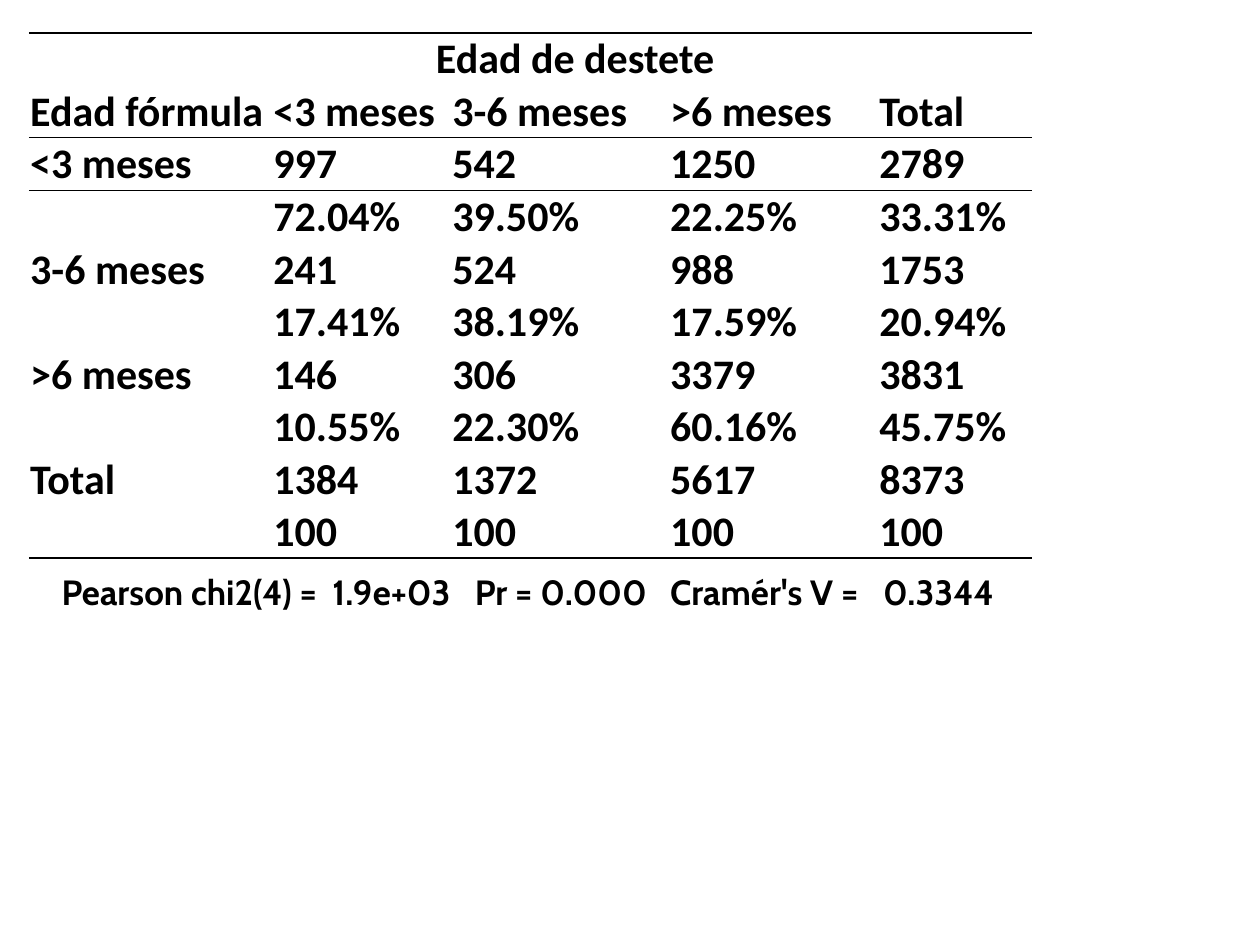
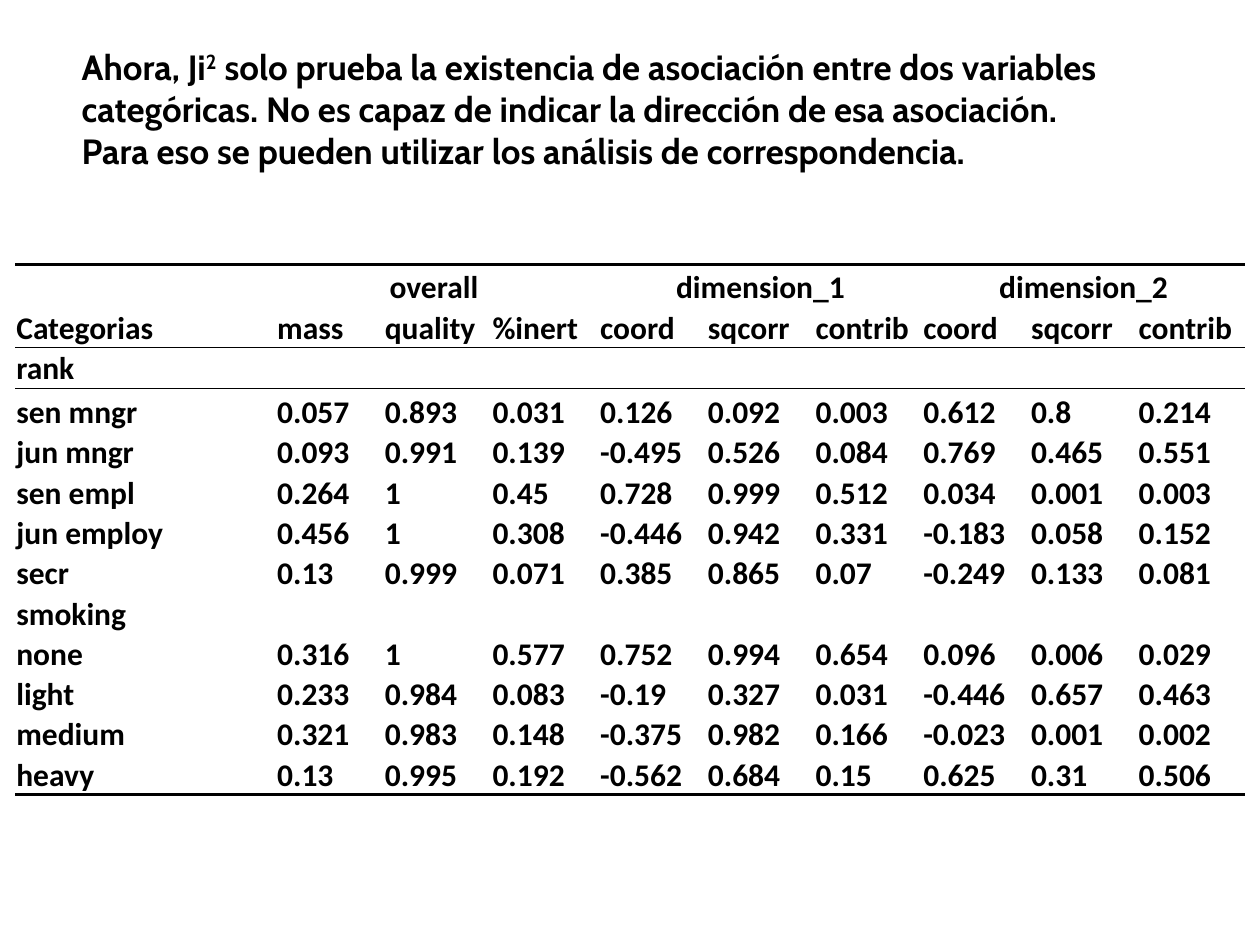
from lxml import etree
from pptx import Presentation
from pptx.dml.color import RGBColor
from pptx.enum.text import MSO_ANCHOR, PP_ALIGN
from pptx.oxml import parse_xml
from pptx.oxml.ns import nsdecls, qn
from pptx.util import Inches, Pt

BLACK = RGBColor(0x00, 0x00, 0x00)
NOTE_FONT = {"name": "Cabin", "size": Pt(20), "bold": True}
THICK, THIN = Pt(1.5), Pt(0.5)
NO_STYLE = "{2D5ABB26-0587-4C30-8999-92F81FD0307C}"
MARGINS = {"margin_left": 0.01, "margin_right": 0.01, "margin_top": 0.01, "margin_bottom": 0}


def add_run(p, text, fmt):
    r = p.add_run()
    r.text = text
    for name, value in fmt.items():
        setattr(r.font, name, value)
    r.font.color.rgb = BLACK
    return r


def add_ruled_table(s, left, top, widths, heights, rows, spans, size):
    """Table with a two-row header, ruled above, below the header and at the end."""
    sp = s.shapes.add_table(len(rows), len(widths), Inches(left), Inches(top),
                            Inches(sum(widths)), Inches(sum(heights)))
    tbl = sp.table
    tbl.first_row = tbl.horz_banding = False
    sp._element.find(".//" + qn("a:tableStyleId")).text = NO_STYLE
    for col, width in zip(tbl.columns, widths):
        col.width = Inches(width)
    for row, height in zip(tbl.rows, heights):
        row.height = Inches(height)
    rules = {0: ("lnT", THICK), 1: ("lnB", THIN), 2: ("lnT", THIN),
             len(rows) - 1: ("lnB", THICK)}
    for i, values in enumerate(rows):
        for j in range(len(widths)):
            cell = tbl.cell(i, j)
            for name, value in MARGINS.items():
                setattr(cell, name, Inches(value))
            cell.vertical_anchor = MSO_ANCHOR.BOTTOM
            if i in rules:
                side, width = rules[i]
                cell._tc.get_or_add_tcPr().append(parse_xml(
                    f'<a:{side} {nsdecls("a")} w="{width}"><a:solidFill>'
                    f'<a:srgbClr val="{BLACK}"/></a:solidFill></a:{side}>'))
            cell.fill.background()
            if j < len(values) and values[j]:
                p = cell.text_frame.paragraphs[0]
                add_run(p, values[j], {"name": "Calibri", "size": Pt(size), "bold": True})
                if i == 0:
                    p.alignment = PP_ALIGN.CENTER
    for first in spans:
        tbl.cell(0, first).merge(tbl.cell(0, first + 2))


prs = Presentation()
prs.slide_width, prs.slide_height = Inches(10), Inches(7.5)
blank = prs.slide_layouts[6]

# Slide 1: weaning age by formula age
s = prs.slides.add_slide(blank)
weaning_rows = [
    ["", "Edad de destete"],
    ["Edad fórmula", "<3 meses", "3-6 meses", ">6 meses", "Total"],
    ["<3 meses", "997", "542", "1250", "2789"],
    ["", "72.04%", "39.50%", "22.25%", "33.31%"],
    ["3-6 meses", "241", "524", "988", "1753"],
    ["", "17.41%", "38.19%", "17.59%", "20.94%"],
    [">6 meses", "146", "306", "3379", "3831"],
    ["", "10.55%", "22.30%", "60.16%", "45.75%"],
    ["Total", "1384", "1372", "5617", "8373"],
    ["", "100", "100", "100", "100"],
]
add_ruled_table(s, 0.23, 0.26, [1.93, 1.42, 1.73, 1.66, 1.22], [0.41] * 10,
                weaning_rows, [1], 24)

# Test statistics, spaced by tab stops
tf = s.shapes.add_textbox(Inches(0.39), Inches(4.48), Inches(7.97), Inches(0.44)).text_frame
tf.word_wrap = True
p = tf.paragraphs[0]
tabs = etree.SubElement(p._p.get_or_add_pPr(), qn("a:tabLst"))
for stop in (2.15, 3.28, 4.83, 6.52):
    etree.SubElement(tabs, qn("a:tab"), pos=str(Inches(stop)), algn="l")
add_run(p, "Pearson chi2(4) =\t1.9e+03\tPr = 0.000\tCramér's V =\t0.3344", NOTE_FONT)

# Slide 2: explanation
s = prs.slides.add_slide(blank)
tf = s.shapes.add_textbox(Inches(0.55), Inches(0.31), Inches(9.06), Inches(1.11)).text_frame
tf.word_wrap = True
p = tf.paragraphs[0]
add_run(p, "Ahora, Ji", NOTE_FONT)
add_run(p, "2", NOTE_FONT).font._element.set("baseline", "30000")
add_run(p, " solo prueba la existencia de asociación entre dos variables categóricas. "
           "No es capaz de indicar la dirección de esa asociación.", NOTE_FONT)
add_run(tf.add_paragraph(), "Para eso se pueden utilizar los análisis de correspondencia.",
        NOTE_FONT)

# Correspondence analysis results
measures = ["coord", "sqcorr", "contrib"]
correspondence_rows = [
    ["", "overall ", "", "", "dimension_1", "", "", "dimension_2"],
    ["Categorias", "mass", "quality", "%inert"] + measures * 2,
    ["rank"],
    ["sen mngr", "0.057", "0.893", "0.031", "0.126", "0.092", "0.003", "0.612", "0.8", "0.214"],
    ["jun mngr", "0.093", "0.991", "0.139", "-0.495", "0.526", "0.084", "0.769", "0.465", "0.551"],
    ["sen empl", "0.264", "1", "0.45", "0.728", "0.999", "0.512", "0.034", "0.001", "0.003"],
    ["jun employ", "0.456", "1", "0.308", "-0.446", "0.942", "0.331", "-0.183", "0.058", "0.152"],
    ["secr", "0.13", "0.999", "0.071", "0.385", "0.865", "0.07", "-0.249", "0.133", "0.081"],
    ["smoking"],
    ["none", "0.316", "1", "0.577", "0.752", "0.994", "0.654", "0.096", "0.006", "0.029"],
    ["light", "0.233", "0.984", "0.083", "-0.19", "0.327", "0.031", "-0.446", "0.657", "0.463"],
    ["medium", "0.321", "0.983", "0.148", "-0.375", "0.982", "0.166", "-0.023", "0.001", "0.002"],
    ["heavy", "0.13", "0.995", "0.192", "-0.562", "0.684", "0.15", "0.625", "0.31", "0.506"],
]
add_ruled_table(s, 0.12, 2.1, [2.07] + [0.855] * 9, [0.34, 0.32, 0.32, 0.35] + [0.32] * 9,
                correspondence_rows, [1, 4, 7], 18)

prs.save("out.pptx")
